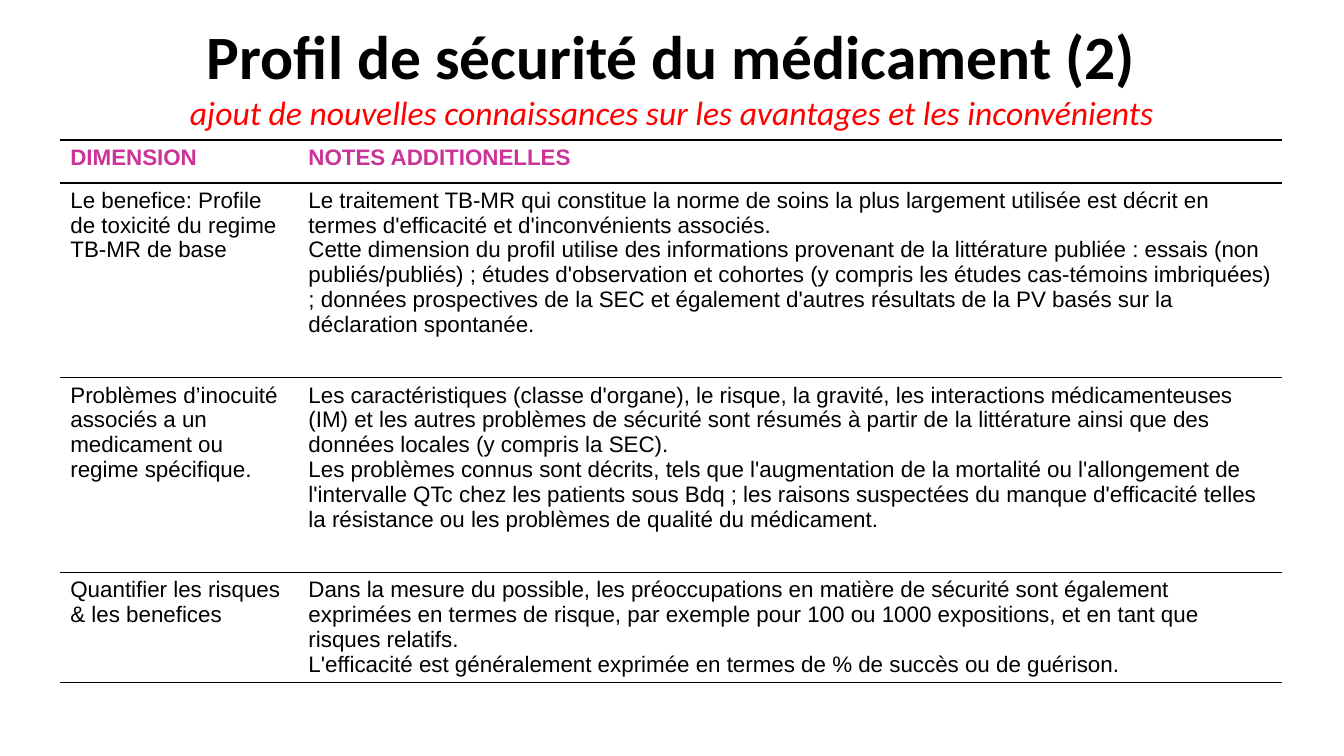
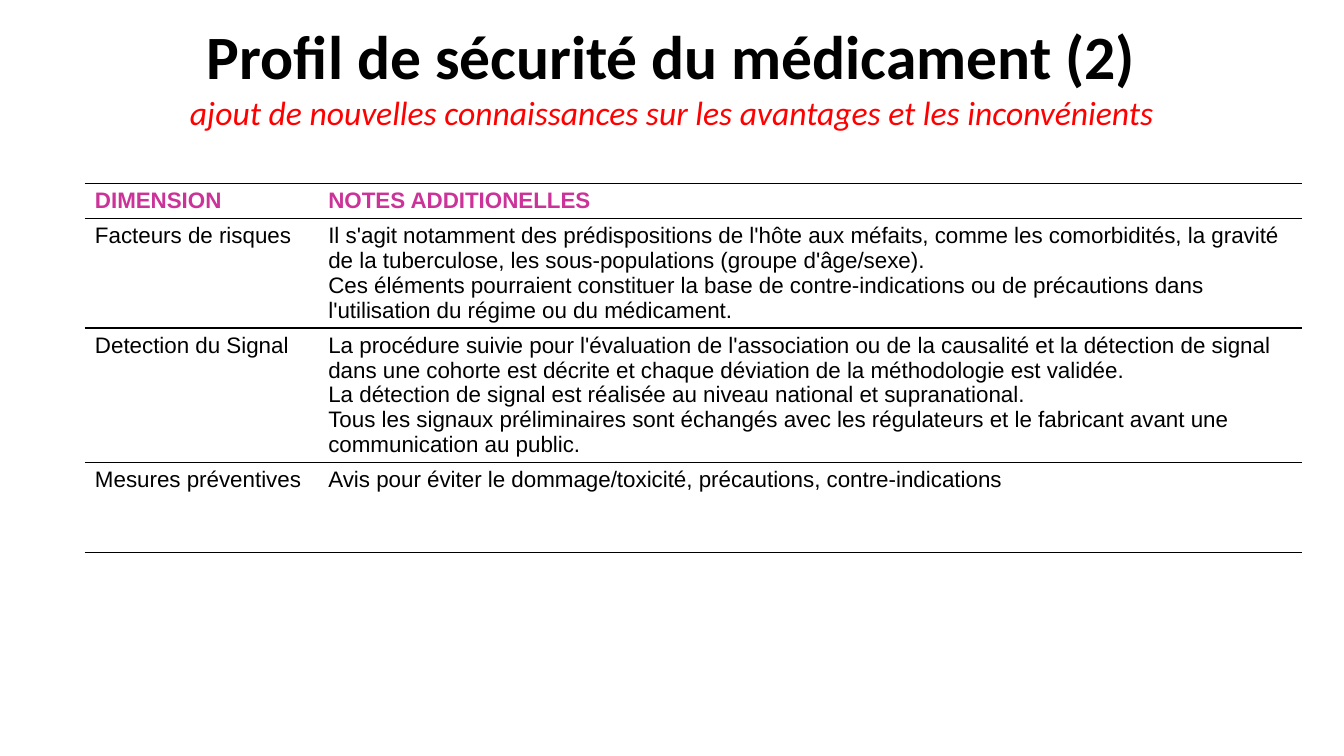
from dataclasses import dataclass

from lxml.etree import SubElement
from pptx import Presentation
from pptx.dml.color import RGBColor
from pptx.enum.text import MSO_ANCHOR, MSO_AUTO_SIZE, PP_ALIGN
from pptx.oxml.ns import qn
from pptx.slide import Slide
from pptx.table import _Cell
from pptx.util import Cm, Pt

BLACK = RGBColor(0x00, 0x00, 0x00)
WHITE = RGBColor(0xFF, 0xFF, 0xFF)
RED = RGBColor(0xFF, 0x00, 0x00)
PINK = RGBColor(0xCC, 0x33, 0x99)

TITLE = "Profil de sécurité du médicament (2)"
SUBTITLE = "ajout de nouvelles connaissances sur les avantages et les inconvénients"
HEADER = ("DIMENSION", "NOTES ADDITIONELLES")

TITLE_FONT = {"name": "Calibri", "size": Pt(44), "bold": True, "italic": False, "color": BLACK}
SUBTITLE_FONT = {"name": "Calibri", "size": Pt(24), "bold": False, "italic": True, "color": RED}
HEADER_FONT = {"name": "Arial", "size": Pt(16), "bold": True, "color": PINK}
BODY_FONT = {"name": "Arial", "size": Pt(16), "bold": False, "color": BLACK}
TITLE_FRAME = {
    "margin_left": Cm(0.25), "margin_right": Cm(0.25),
    "margin_top": Cm(0.13), "margin_bottom": Cm(0.13),
    "word_wrap": True, "auto_size": MSO_AUTO_SIZE.NONE,
    "vertical_anchor": MSO_ANCHOR.TOP,
}
TITLE_BOX = {"left": Cm(3.33), "top": Cm(0.33), "width": Cm(27.2), "height": Cm(3.99)}


@dataclass(frozen=True)
class Row:
    height: float
    dimension: str
    notes: tuple[str, ...]


@dataclass(frozen=True)
class Profile:
    left: float
    top: float
    widths: tuple[float, float]
    header_height: float
    rows: tuple[Row, ...]


PROFILES = (
    Profile(1.52, 3.53, (6, 24.8), 1.08, (
        Row(4.91, "Le benefice: Profile de toxicité du regime TB-MR de base", (
            "Le traitement TB-MR qui constitue la norme de soins la plus largement utilisée est décrit en termes d'efficacité et d'inconvénients associés.",
            "Cette dimension du profil utilise des informations provenant de la littérature publiée : essais (non publiés/publiés) ; études d'observation et cohortes (y compris les études cas-témoins imbriquées) ; données prospectives de la SEC et également d'autres résultats de la PV basés sur la déclaration spontanée.",
        )),
        Row(4.91, "Problèmes d’inocuité associés a un medicament ou regime spécifique.", (
            "Les caractéristiques (classe d'organe), le risque, la gravité, les interactions médicamenteuses (IM) et les autres problèmes de sécurité sont résumés à partir de la littérature ainsi que des données locales (y compris la SEC).",
            "Les problèmes connus sont décrits, tels que l'augmentation de la mortalité ou l'allongement de l'intervalle QTc chez les patients sous Bdq ; les raisons suspectées du manque d'efficacité telles la résistance ou les problèmes de qualité du médicament.",
        )),
        Row(2.72, "Quantifier les risques & les benefices", (
            "Dans la mesure du possible, les préoccupations en matière de sécurité sont également exprimées en termes de risque, par exemple pour 100 ou 1000 expositions, et en tant que risques relatifs.",
            "L'efficacité est généralement exprimée en termes de % de succès ou de guérison.",
        )),
    )),
    Profile(2.14, 4.62, (5.88, 24.8), 0.8, (
        Row(2.26, "Facteurs de risques", (
            "Il s'agit notamment des prédispositions de l'hôte aux méfaits, comme les comorbidités, la gravité de la tuberculose, les sous-populations (groupe d'âge/sexe).",
            "Ces éléments pourraient constituer la base de contre-indications ou de précautions dans l'utilisation du régime ou du médicament.",
        )),
        Row(2.26, "Detection du Signal", (
            "La procédure suivie pour l'évaluation de l'association ou de la causalité et la détection de signal dans une cohorte est décrite et chaque déviation de la méthodologie est validée.",
            "La détection de signal est réalisée au niveau national et supranational.",
            "Tous les signaux préliminaires sont échangés avec les régulateurs et le fabricant avant une communication au public.",
        )),
        Row(2.26, "Mesures préventives", (
            "Avis pour éviter le dommage/toxicité, précautions, contre-indications",
        )),
    )),
)


def set_attrs(target: object, values: dict) -> None:
    for name, value in values.items():
        setattr(target, name, value)


def format_font(font, values: dict) -> None:
    for name, value in values.items():
        if name == "color":
            font.color.rgb = value
        else:
            setattr(font, name, value)


def add_title(s: Slide) -> None:
    sp = s.shapes.title
    set_attrs(sp, TITLE_BOX)
    tf = sp.text_frame
    set_attrs(tf, TITLE_FRAME)
    p = tf.paragraphs[0]
    set_attrs(p, {"alignment": PP_ALIGN.CENTER, "line_spacing": 1.0})
    format_font(p.font, TITLE_FONT)
    for text, values in ((TITLE, TITLE_FONT), (SUBTITLE, SUBTITLE_FONT)):
        if p.runs:
            p.add_line_break()
        r = p.add_run()
        r.text = text
        format_font(r.font, values)


def set_borders(cell: _Cell) -> None:
    tc_pr = cell._tc.get_or_add_tcPr()
    for side in ("a:lnL", "a:lnR"):
        SubElement(SubElement(tc_pr, qn(side), w="0"), qn("a:noFill"))
    for side in ("a:lnT", "a:lnB"):
        ln = SubElement(tc_pr, qn(side), w=str(Pt(1)))
        SubElement(SubElement(ln, qn("a:solidFill")), qn("a:srgbClr"), val=str(BLACK))


def fill_cell(cell: _Cell, texts: tuple[str, ...], values: dict) -> None:
    set_borders(cell)
    cell.fill.solid()
    cell.fill.fore_color.rgb = WHITE
    tf = cell.text_frame
    for i, text in enumerate(texts):
        p = tf.add_paragraph() if i else tf.paragraphs[0]
        r = p.add_run()
        r.text = text
        format_font(r.font, values)


def add_profile(s: Slide, profile: Profile) -> None:
    rows = (Row(profile.header_height, HEADER[0], HEADER[1:]), *profile.rows)
    table = s.shapes.add_table(
        len(rows), len(profile.widths), Cm(profile.left), Cm(profile.top),
        Cm(sum(profile.widths)), Cm(sum(row.height for row in rows)),
    ).table
    table.horz_banding = False
    for column, width in zip(table.columns, profile.widths):
        column.width = Cm(width)
    for i, row in enumerate(rows):
        table.rows[i].height = Cm(row.height)
        values = BODY_FONT if i else HEADER_FONT
        for j, texts in enumerate(((row.dimension,), row.notes)):
            fill_cell(table.cell(i, j), texts, values)


def main() -> None:
    prs = Presentation()
    set_attrs(prs, {"slide_width": Cm(33.87), "slide_height": Cm(19.05)})
    for profile in PROFILES:
        s = prs.slides.add_slide(prs.slide_layouts[5])
        add_title(s)
        add_profile(s, profile)
    prs.save("out.pptx")


if __name__ == "__main__":
    main()
